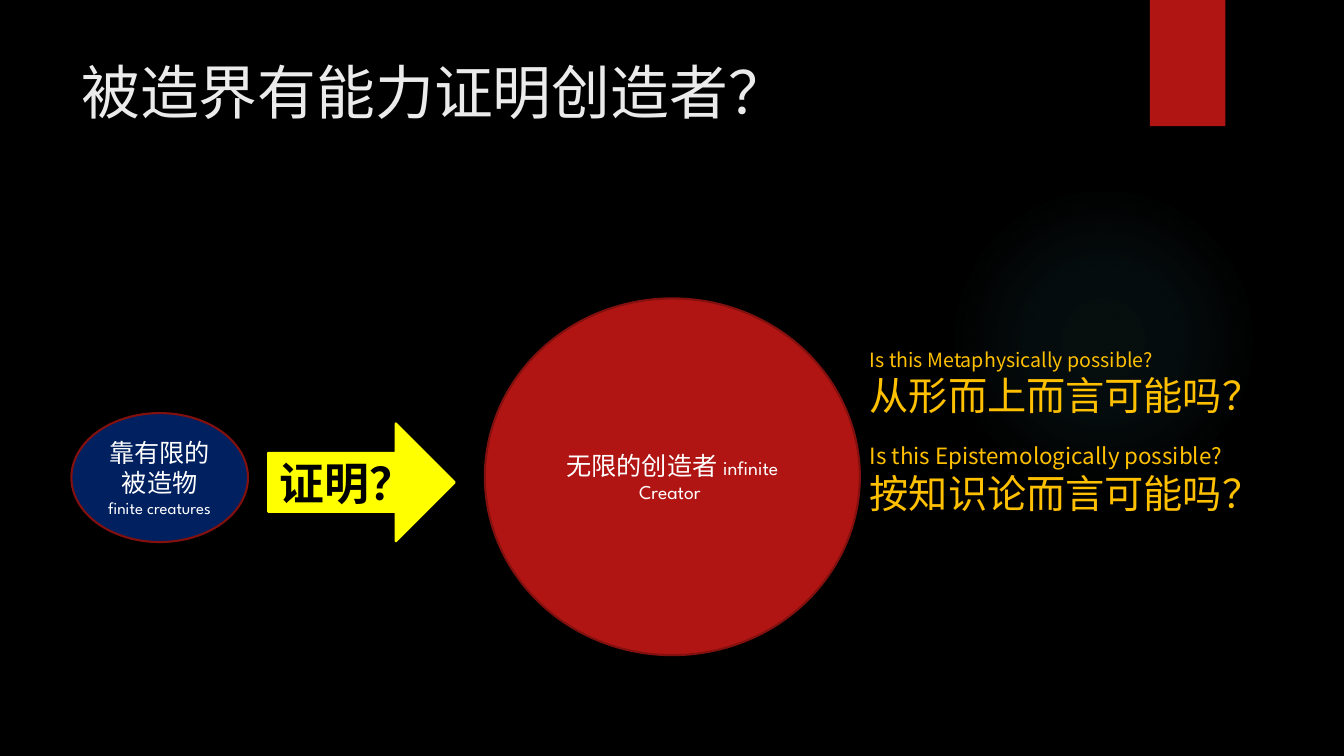
from lxml.etree import fromstring
from pptx import Presentation
from pptx.dml.color import RGBColor
from pptx.enum.shapes import MSO_SHAPE as Kind
from pptx.enum.text import MSO_ANCHOR as Anchor, PP_ALIGN as Align
from pptx.oxml.ns import nsdecls
from pptx.util import Cm, Pt


def tint(code):
    return RGBColor.from_string(code)


class Board:
    """Hold the style and the current slide, and draw elements on it."""

    font = "League Spartan"
    red, rim, white = "B01513", "82100E", "FFFFFF"

    def __init__(self, deck):
        self.slide = deck.slides.add_slide(deck.slide_layouts[6])
        back = self.slide.background.fill
        back.solid()
        back.fore_color.rgb = tint("000000")

    def shape(self, kind, box, fill=None, line=None):
        item = self.slide.shapes.add_shape(kind, *map(Cm, box))
        item.shadow.inherit = False
        if fill:
            item.fill.solid()
            item.fill.fore_color.rgb = tint(fill)
        if line:
            item.line.color.rgb = tint(line)
            item.line.width = Pt(1.5)
        else:
            item.line.fill.background()
        return item

    def glow(self, box, code, stops):
        item = self.shape(Kind.OVAL, box)
        marks = "".join(
            f'<a:gs pos="{pos * 1000}"><a:srgbClr val="{code}">'
            f'<a:alpha val="{alpha * 1000}"/></a:srgbClr></a:gs>'
            for pos, alpha in stops)
        grad = fromstring(
            f'<a:gradFill {nsdecls("a")}><a:gsLst>{marks}</a:gsLst>'
            '<a:path path="circle"><a:fillToRect l="50000" t="50000" '
            'r="50000" b="50000"/></a:path></a:gradFill>')
        item.element.spPr.find("{*}prstGeom").addnext(grad)

    def rows(self, frame, rows, color, font=None, bold=False, align=Align.LEFT):
        for num, row in enumerate(rows):
            para = frame.add_paragraph() if num else frame.paragraphs[0]
            para.alignment = align
            for text, size in row:
                run = para.add_run()
                run.text = text
                run.font.size = Pt(size)
                run.font.name = font or self.font
                run.font.bold = bold
                run.font.color.rgb = tint(color)

    def label(self, kind, box, fill, line, rows, color=white, bold=False):
        frame = self.shape(kind, box, fill, line).text_frame
        frame.word_wrap = True
        frame.vertical_anchor = Anchor.MIDDLE
        self.rows(frame, rows, color, bold=bold, align=Align.CENTER)

    def text(self, box, rows, color, font=None, wrap=True):
        frame = self.slide.shapes.add_textbox(*map(Cm, box)).text_frame
        frame.word_wrap = wrap
        self.rows(frame, rows, color, font)
        return frame


def main():
    deck = Presentation()
    deck.slide_width, deck.slide_height = Cm(33.87), Cm(19.05)
    board = Board(deck)

    board.glow((23.9, 4.65, 7.82, 7.82), "50B9C1", [(0, 7), (36, 6), (69, 0)])
    board.shape(Kind.RECTANGLE, (28.98, 0, 1.9, 3.18), board.red)
    board.text((1.8, 1.27, 26.14, 3.89), [[("被造界有能力证明创造者？", 42)]], "EBEBEB")

    board.label(Kind.OVAL, (12.22, 7.52, 9.45, 8.99), board.red, board.rim,
                [[("无限的创造者 ", 18), ("infinite Creator ", 14)]])
    board.label(Kind.OVAL, (1.8, 10.41, 4.45, 3.25), "002060", board.rim,
                [[("靠有限的被造物", 18)], [("finite creatures", 12)]])
    board.label(Kind.RIGHT_ARROW, (6.76, 10.67, 4.7, 2.97), "FFFF00", "FFFF00",
                [[("证明？", 32)]], "000000", True)

    asks = board.text((21.67, 8.64, 10.49, 6.76), [
        [("Is this Metaphysically possible?", 14)],
        [("从形而上而言可能吗？", 28)],
        [("Is this Epistemologically possible?", 16)],
        [("按知识论而言可能吗？", 28)],
    ], "FFC000", "Noto Sans CJK SC", wrap=False)
    asks.paragraphs[2].space_before = Pt(17)

    deck.save("out.pptx")


if __name__ == "__main__":
    main()
